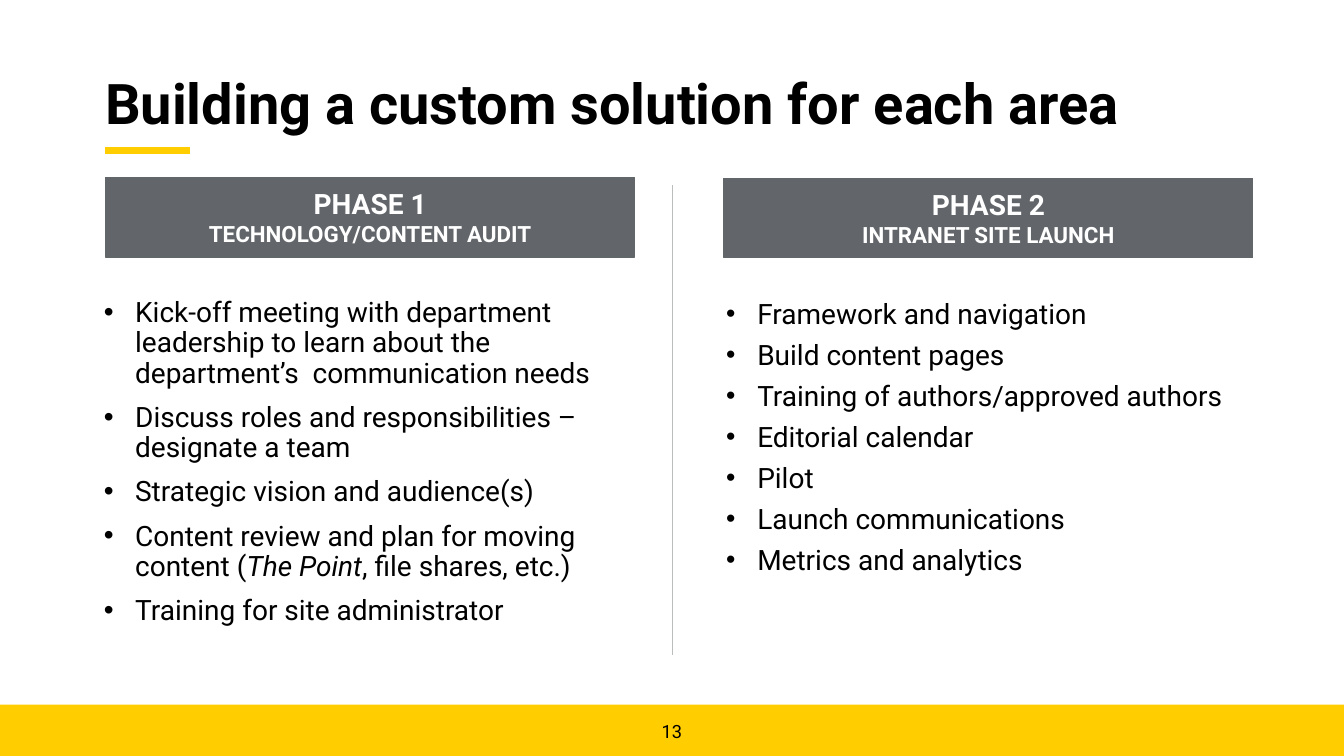
import pptx
import pptx.dml.color
import pptx.enum.shapes
import pptx.enum.text
import pptx.oxml
import pptx.util
from lxml import etree

Pt = pptx.util.Pt
RGBColor = pptx.dml.color.RGBColor
ALIGN = pptx.enum.text.PP_ALIGN
ANCHOR = pptx.enum.text.MSO_ANCHOR

BLACK = RGBColor(0x00, 0x00, 0x00)
WHITE = RGBColor(0xFF, 0xFF, 0xFF)
GOLD = RGBColor(0xFF, 0xCD, 0x00)
SLATE = RGBColor(0x62, 0x66, 0x6A)
SLATE_EDGE = RGBColor(0x61, 0x66, 0x69)
RULE_GREY = RGBColor(0xBB, 0xBC, 0xBC)
FONT = "Roboto"
PAGE_WIDTH, PAGE_HEIGHT = 960, 540
INDENT = 22.3

# Each list item is a sequence of (text, italic) spans.
PHASE_1_ITEMS = [
    [("Kick-off meeting with department leadership to learn about the "
      "department’s  communication needs", False)],
    [("Discuss roles and responsibilities – designate a team", False)],
    [("Strategic vision and audience(s)", False)],
    [("Content review and plan for moving content (", False),
     ("The Point", True),
     (", file shares, etc.)", False)],
    [("Training for site administrator", False)],
]
PHASE_2_ITEMS = [
    [(text, False)]
    for text in (
        "Framework and navigation",
        "Build content pages",
        "Training of authors/approved authors",
        "Editorial calendar",
        "Pilot",
        "Launch communications",
        "Metrics and analytics",
    )
]


def place(box, left, top, width, height):
    box.left, box.top = Pt(left), Pt(top)
    box.width, box.height = Pt(width), Pt(height)


def prepare_frame(box, anchor, bottom=0):
    """Set wrapping, anchor and insets, and return the text frame."""
    frame = box.text_frame
    frame.word_wrap = True
    frame.auto_size = pptx.enum.text.MSO_AUTO_SIZE.NONE
    frame.vertical_anchor = anchor
    frame.margin_left = frame.margin_right = frame.margin_top = Pt(0)
    frame.margin_bottom = Pt(bottom)
    return frame


def add_span(para, text, size, color=BLACK, bold=False, italic=False):
    span = para.add_run()
    span.text = text
    span.font.name = FONT
    span.font.size = Pt(size)
    span.font.color.rgb = color
    span.font.bold = bold
    span.font.italic = italic


def add_bullet(para, percent):
    properties = para._p.get_or_add_pPr()
    properties.set("marL", str(Pt(INDENT)))
    properties.set("indent", str(-Pt(INDENT)))
    for tag, name, value in (
        ("a:buSzPct", "val", str(percent * 1000)),
        ("a:buFont", "typeface", "Arial"),
        ("a:buChar", "char", "•"),
    ):
        etree.SubElement(properties, pptx.oxml.ns.qn(tag)).set(name, value)


def fill_title(box, text):
    place(box, 75, 41.8, 810, 68.4)
    para = prepare_frame(box, ANCHOR.MIDDLE).paragraphs[0]
    para.alignment = ALIGN.LEFT
    para.line_spacing = 0.9
    add_span(para, text, 40, bold=True)


def fill_phase_header(box, left, top, phase, subject):
    place(box, left, top, 378, 56.9)
    box.fill.solid()
    box.fill.fore_color.rgb = SLATE
    box.line.color.rgb = SLATE_EDGE
    box.line.width = Pt(0.75)
    para = prepare_frame(box, ANCHOR.BOTTOM, bottom=7.2).paragraphs[0]
    para.alignment = ALIGN.CENTER
    para.space_before = Pt(0)
    add_span(para, phase, 20, WHITE, bold=True)
    para.add_line_break()
    add_span(para, subject, 16, WHITE, bold=True)


def fill_list(box, bounds, items, spacing, bullet_percent):
    place(box, *bounds)
    frame = prepare_frame(box, ANCHOR.TOP)
    for index, item in enumerate(items):
        para = frame.add_paragraph() if index else frame.paragraphs[0]
        add_bullet(para, bullet_percent)
        para.line_spacing = spacing
        para.space_before = Pt(10 if index else 0)
        for text, italic in item:
            add_span(para, text, 20, italic=italic)


def add_rule(page, start, end, color, width):
    rule = page.shapes.add_connector(
        pptx.enum.shapes.MSO_CONNECTOR.STRAIGHT,
        Pt(start[0]), Pt(start[1]), Pt(end[0]), Pt(end[1]))
    rule.line.color.rgb = color
    rule.line.width = Pt(width)
    etree.SubElement(rule._element.spPr, pptx.oxml.ns.qn("a:effectLst"))


def add_footer(page, number):
    band = page.shapes.add_shape(
        pptx.enum.shapes.MSO_SHAPE.RECTANGLE,
        Pt(0), Pt(503.3), Pt(PAGE_WIDTH), Pt(PAGE_HEIGHT - 503.3))
    band.shadow.inherit = False
    band.fill.solid()
    band.fill.fore_color.rgb = GOLD
    band.line.fill.background()
    box = page.shapes.add_textbox(Pt(456.5), Pt(514.8), Pt(46.8), Pt(18.7))
    para = prepare_frame(box, ANCHOR.TOP).paragraphs[0]
    para.alignment = ALIGN.CENTER
    add_span(para, number, 13)


def main():
    deck = pptx.Presentation()
    deck.slide_width, deck.slide_height = Pt(PAGE_WIDTH), Pt(PAGE_HEIGHT)
    comparison = deck.slide_layouts.get_by_name("Comparison")
    page = deck.slides.add_slide(comparison)
    title, header_1, list_1, header_2, list_2 = page.placeholders

    add_footer(page, "13")
    add_rule(page, (75, 107.3), (135.5, 107.3), GOLD, 5)
    add_rule(page, (480, 132.5), (480, 468), RULE_GREY, 0.5)
    fill_title(title, "Building a custom solution for each area")
    fill_phase_header(header_1, 75.4, 126.7, "PHASE 1", "TECHNOLOGY/CONTENT AUDIT")
    fill_phase_header(header_2, 517, 127.4, "PHASE 2", "INTRANET SITE LAUNCH")
    fill_list(list_1, (74.2, 213.1, 371.5, 235.4), PHASE_1_ITEMS, 0.9, 100)
    fill_list(list_2, (518.6, 216.7, 378, 258.5), PHASE_2_ITEMS, 0.8, 95)
    deck.save("out.pptx")


if __name__ == "__main__":
    main()
